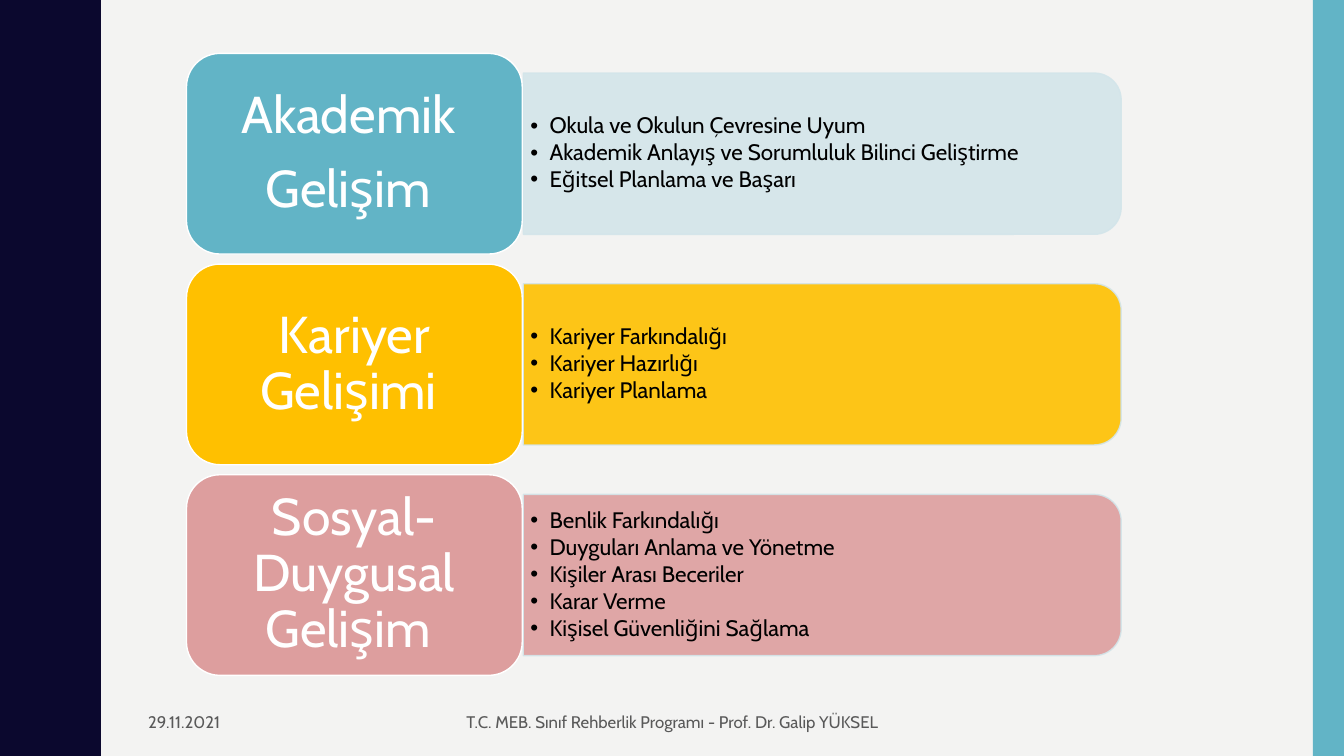
from lxml import etree
from pptx import Presentation
from pptx.dml.color import RGBColor
from pptx.enum import shapes, text
from pptx.oxml import ns
from pptx.util import Inches, Pt

WIDTH, HEIGHT = 13.33, 7.5
FONT = "Cabin"
BACKGROUND, NAVY, TEAL, PALE_BLUE = "F3F3F2", "0B082E", "62B4C6", "D3E5EA"

AREAS = [
    {"title": ["Akademik ", "Gelişim "], "card": TEAL, "panel": PALE_BLUE,
     "items": ["Okula ve Okulun Çevresine Uyum",
               "Akademik Anlayış ve Sorumluluk Bilinci Geliştirme",
               "Eğitsel Planlama ve Başarı"]},
    {"title": ["Kariyer Gelişimi "], "card": "FFC000", "panel": "FFC000",
     "items": ["Kariyer Farkındalığı", "Kariyer Hazırlığı", "Kariyer Planlama"]},
    {"title": ["Sosyal- Duygusal Gelişim "], "card": "DD9E9E", "panel": "DD9E9E",
     "items": ["Benlik Farkındalığı", "Duyguları Anlama ve Yönetme",
               "Kişiler Arası Beceriler", "Karar Verme",
               "Kişisel Güvenliğini Sağlama"]},
]
FOOTERS = [
    ("29.11.2021", (1.37, 6.97, 2.55, 0.38), text.PP_ALIGN.LEFT),
    ("T.C. MEB. Sınıf Rehberlik Programı - Prof. Dr. Galip YÜKSEL",
     (4.42, 6.97, 4.5, 0.38), text.PP_ALIGN.CENTER),
]

CARD_LEFT, CARD_TOP, CARD_WIDTH, CARD_HEIGHT, CARD_GAP = 1.85, 0.53, 3.33, 1.99, 0.1
PANEL_LEFT, PANEL_WIDTH, PANEL_HEIGHT = 5.19, 5.93, 1.6
ITEMS_WIDTH, ITEMS_HEIGHT, BULLET_INDENT = 5.85, 1.44, 0.19

# Half a wave of the left edge, from trough to crest: (x, y)
HALF_WAVE = [(0.78, 0), (0.78, 0.07), (0.79, 0.14), (0.8, 0.2), (0.81, 0.25),
             (0.83, 0.29), (0.85, 0.33), (0.87, 0.38), (0.89, 0.42), (0.91, 0.46),
             (0.93, 0.5), (0.95, 0.55), (0.96, 0.61), (0.97, 0.68), (0.97, 0.75)]
WAVE_LENGTH, WAVE_COUNT = 1.5, 5

TITLE_STYLE = {"alignment": text.PP_ALIGN.CENTER, "line_spacing": 0.9,
               "space_after": Pt(12.5)}
ITEM_STYLE = {"line_spacing": 0.9, "space_after": Pt(2)}


def color(hex_code):
    return RGBColor.from_string(hex_code)


def set_alpha(fill_parent, percent):
    """Make the solid fill directly under the given element partly see-through."""
    choice = fill_parent.find(ns.qn("a:solidFill"))[0]
    etree.SubElement(choice, ns.qn("a:alpha"), val=str(percent * 1000))


def paint(shape, fill, line=None):
    shape.shadow.inherit = False
    shape.fill.solid()
    shape.fill.fore_color.rgb = color(fill)
    if line:
        shape.line.color.rgb = color(line)
        shape.line.width = Pt(1)
    else:
        shape.line.fill.background()


def add_shape(slide, kind, box, fill, line=None):
    shape = slide.shapes.add_shape(kind, *map(Inches, box))
    paint(shape, fill, line)
    return shape


def write(shape, lines, size, hex_code, style, insets=(0.1, 0.05)):
    """Fill the shape with one paragraph per line; insets are (sides, top and bottom)."""
    frame = shape.text_frame
    across, down = map(Inches, insets)
    layout = {"word_wrap": True, "vertical_anchor": text.MSO_ANCHOR.MIDDLE,
              "margin_left": across, "margin_right": across,
              "margin_top": down, "margin_bottom": down}
    for name, value in layout.items():
        setattr(frame, name, value)
    for index, line in enumerate(lines):
        paragraph = frame.add_paragraph() if index else frame.paragraphs[0]
        for name, value in style.items():
            setattr(paragraph, name, value)
        run = paragraph.add_run()
        run.text = line
        run.font.name, run.font.size = FONT, Pt(size)
        run.font.color.rgb = color(hex_code)


def add_bullets(frame):
    for paragraph in frame.paragraphs:
        properties = paragraph._p.get_or_add_pPr()
        properties.set("marL", str(Inches(BULLET_INDENT)))
        properties.set("indent", str(-Inches(BULLET_INDENT)))
        etree.SubElement(properties, ns.qn("a:buFont"), typeface="Arial")
        etree.SubElement(properties, ns.qn("a:buChar"), char="•")


def add_wave(slide):
    falling = [(x, WAVE_LENGTH - y) for x, y in reversed(HALF_WAVE[:-1])]
    edge = [(x, y + index * WAVE_LENGTH) for index in range(WAVE_COUNT)
            for x, y in HALF_WAVE + falling]
    builder = slide.shapes.build_freeform(0, 0, scale=Inches(1))
    builder.add_line_segments(edge + [(0, HEIGHT)], close=True)
    paint(builder.convert_to_shape(), NAVY)


def add_area(slide, area, top):
    middle = top + CARD_HEIGHT / 2
    # The panel is drawn upright, then turned so its round corners face right
    panel = add_shape(slide, shapes.MSO_SHAPE.ROUND_2_SAME_RECTANGLE,
                      (PANEL_LEFT + (PANEL_WIDTH - PANEL_HEIGHT) / 2,
                       middle - PANEL_WIDTH / 2, PANEL_HEIGHT, PANEL_WIDTH),
                      area["panel"], PALE_BLUE)
    panel.rotation = 90
    properties = panel._element.spPr
    set_alpha(properties, 90)
    set_alpha(properties.find(ns.qn("a:ln")), 90)

    items = slide.shapes.add_textbox(*map(Inches, (
        PANEL_LEFT, middle - ITEMS_HEIGHT / 2, ITEMS_WIDTH, ITEMS_HEIGHT)))
    write(items, area["items"], 16, "000000", ITEM_STYLE, (0.07, 0.03))
    add_bullets(items.text_frame)

    card = add_shape(slide, shapes.MSO_SHAPE.ROUNDED_RECTANGLE,
                     (CARD_LEFT, top, CARD_WIDTH, CARD_HEIGHT), area["card"], "FFFFFF")
    write(card, area["title"], 37, "FFFFFF", TITLE_STYLE, (0.25, 0.17))


def main():
    presentation = Presentation()
    presentation.slide_width, presentation.slide_height = Inches(WIDTH), Inches(HEIGHT)
    slide = presentation.slides.add_slide(presentation.slide_layouts[6])
    slide.background.fill.solid()
    slide.background.fill.fore_color.rgb = color(BACKGROUND)

    add_wave(slide)
    add_shape(slide, shapes.MSO_SHAPE.RECTANGLE, (13.02, 0, 0.31, HEIGHT), TEAL)
    for index, area in enumerate(AREAS):
        add_area(slide, area, CARD_TOP + index * (CARD_HEIGHT + CARD_GAP))
    for line, box, alignment in FOOTERS:
        footer = slide.shapes.add_textbox(*map(Inches, box))
        write(footer, [line], 12, "595959", {"alignment": alignment})
    presentation.save("out.pptx")


if __name__ == "__main__":
    main()
